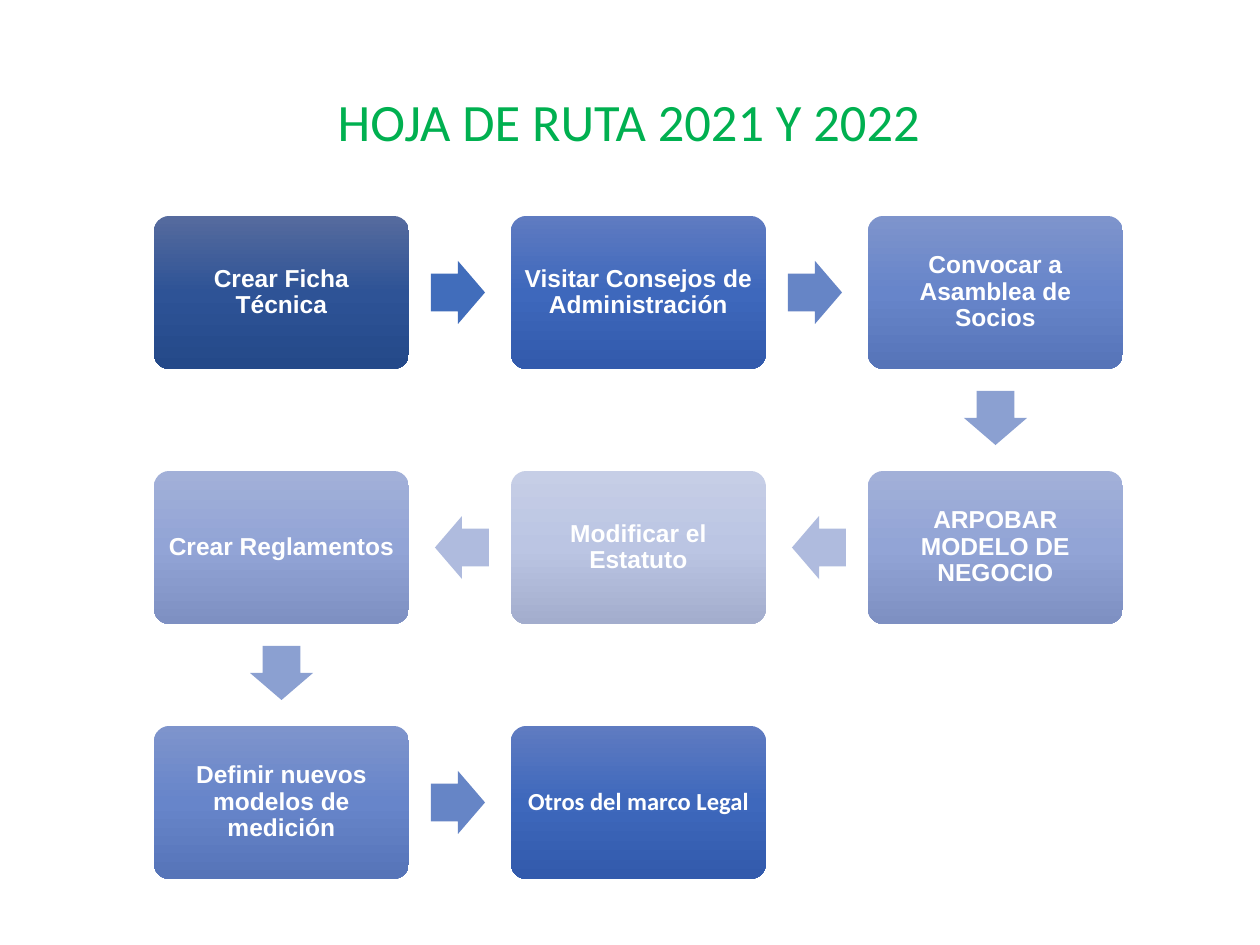
from copy import deepcopy

from pptx import Presentation
from pptx.dml.color import RGBColor
from pptx.enum.shapes import MSO_SHAPE as Preset
from pptx.enum.text import MSO_ANCHOR as Anchor, PP_ALIGN as Align
from pptx.util import Pt

PX = 914400 // 126
COLUMNS = 3
STEP_W, STEP_H = 255, 153
PITCH_X, PITCH_Y = 357, 255
ARROW_W, ARROW_H, ARROW_GAP = 54, 63, 22

GREEN = RGBColor(0x00, 0xB0, 0x50)
WHITE = RGBColor(0xFF, 0xFF, 0xFF)
NAVY = (RGBColor(0x56, 0x6B, 0x9E), RGBColor(0x2E, 0x53, 0x96), RGBColor(0x24, 0x49, 0x89))
ROYAL = (RGBColor(0x5F, 0x7B, 0xC1), RGBColor(0x3E, 0x68, 0xBC), RGBColor(0x32, 0x5A, 0xAC))
STEEL = (RGBColor(0x7E, 0x94, 0xCC), RGBColor(0x67, 0x85, 0xCA), RGBColor(0x56, 0x74, 0xB8))
LILAC = (RGBColor(0xA2, 0xB0, 0xD8), RGBColor(0x92, 0xA4, 0xD6), RGBColor(0x7E, 0x90, 0xC2))
MIST = (RGBColor(0xC6, 0xCE, 0xE6), RGBColor(0xBB, 0xC5, 0xE3), RGBColor(0xA3, 0xAD, 0xCD))
ARROW_ROYAL = RGBColor(0x41, 0x6D, 0xBB)
ARROW_STEEL = RGBColor(0x66, 0x85, 0xC6)
ARROW_LILAC = RGBColor(0x8B, 0xA0, 0xD1)
ARROW_MIST = RGBColor(0xAF, 0xBB, 0xDE)

STEPS = [
    ("Crear Ficha Técnica", NAVY, "Arial"),
    ("Visitar Consejos de Administración", ROYAL, "Arial"),
    ("Convocar a Asamblea de Socios", STEEL, "Arial"),
    ("ARPOBAR MODELO DE NEGOCIO", LILAC, "Arial"),
    ("Modificar el Estatuto", MIST, "Arial"),
    ("Crear Reglamentos", LILAC, "Arial"),
    ("Definir nuevos modelos de medición", STEEL, "Arial"),
    ("Otros del marco Legal", ROYAL, "Calibri"),
]
ARROW_COLOURS = [ARROW_ROYAL, ARROW_STEEL, ARROW_LILAC, ARROW_MIST,
                 ARROW_MIST, ARROW_LILAC, ARROW_STEEL]


def px(*lengths):
    return [round(length * PX) for length in lengths]


def write(frame, text, font_name, size, colour, bold=False):
    frame.word_wrap = True
    frame.vertical_anchor = Anchor.MIDDLE
    line = frame.paragraphs[0]
    line.text = text
    line.alignment = Align.CENTER
    line.line_spacing = 0.9
    line.font.name = font_name
    line.font.size = Pt(size)
    line.font.bold = bold
    line.font.color.rgb = colour


def add_title(slide, left, top, width, height):
    title = slide.shapes.add_textbox(*px(left, top, width, height))
    write(title.text_frame, "HOJA DE RUTA 2021 Y 2022", "Calibri", 30, GREEN)


def add_preset(slide, preset, left, top, width, height):
    shape = slide.shapes.add_shape(preset, *px(left, top, width, height))
    shape.shadow.inherit = False
    shape.line.fill.background()
    return shape


def fill_gradient(shape, colours):
    shape.fill.gradient()
    shape.fill.gradient_angle = 270
    stop_list = shape._element.xpath(".//a:gsLst")[0]
    stop_list.insert(1, deepcopy(stop_list[0]))
    for stop, position, colour in zip(shape.fill.gradient_stops, (0, 0.5, 1), colours):
        stop.position = position
        stop.color.rgb = colour


def add_step(slide, left, top, text, colours, font_name):
    step = add_preset(slide, Preset.ROUNDED_RECTANGLE, left, top, STEP_W, STEP_H)
    step.adjustments[0] = 0.1
    fill_gradient(step, colours)
    frame = step.text_frame
    frame.margin_left, frame.margin_top, frame.margin_right, frame.margin_bottom = px(8, 8, 8, 8)
    write(frame, text, font_name, 14, WHITE, bold=True)


def add_arrow(slide, left, top, across, down, colour):
    reach = ARROW_GAP + ARROW_W / 2
    center_x = left + STEP_W / 2 + across * (STEP_W / 2 + reach)
    center_y = top + STEP_H / 2 + down * (STEP_H / 2 + reach)
    arrow = add_preset(slide, Preset.RIGHT_ARROW, center_x - ARROW_W / 2,
                       center_y - ARROW_H / 2, ARROW_W, ARROW_H)
    arrow.adjustments[0] = 0.6
    arrow.adjustments[1] = 0.5
    arrow.rotation = {(1, 0): 0, (0, 1): 90, (-1, 0): 180}[across, down]
    arrow.fill.solid()
    arrow.fill.fore_color.rgb = colour


def snake_cell(index):
    row, column = divmod(index, COLUMNS)
    return (COLUMNS - 1 - column if row % 2 else column), row


def add_roadmap(slide, left, top):
    for index, step in enumerate(STEPS):
        column, row = snake_cell(index)
        step_left, step_top = left + column * PITCH_X, top + row * PITCH_Y
        add_step(slide, step_left, step_top, *step)
        if index < len(ARROW_COLOURS):
            next_column, next_row = snake_cell(index + 1)
            add_arrow(slide, step_left, step_top, next_column - column,
                      next_row - row, ARROW_COLOURS[index])


def main():
    deck = Presentation()
    deck.slide_width, deck.slide_height = px(1260, 945)
    slide = deck.slides.add_slide(deck.slide_layouts[6])
    add_title(slide, 86, 66, 1086, 117)
    add_roadmap(slide, 154, 216)
    deck.save("out.pptx")


if __name__ == "__main__":
    main()
